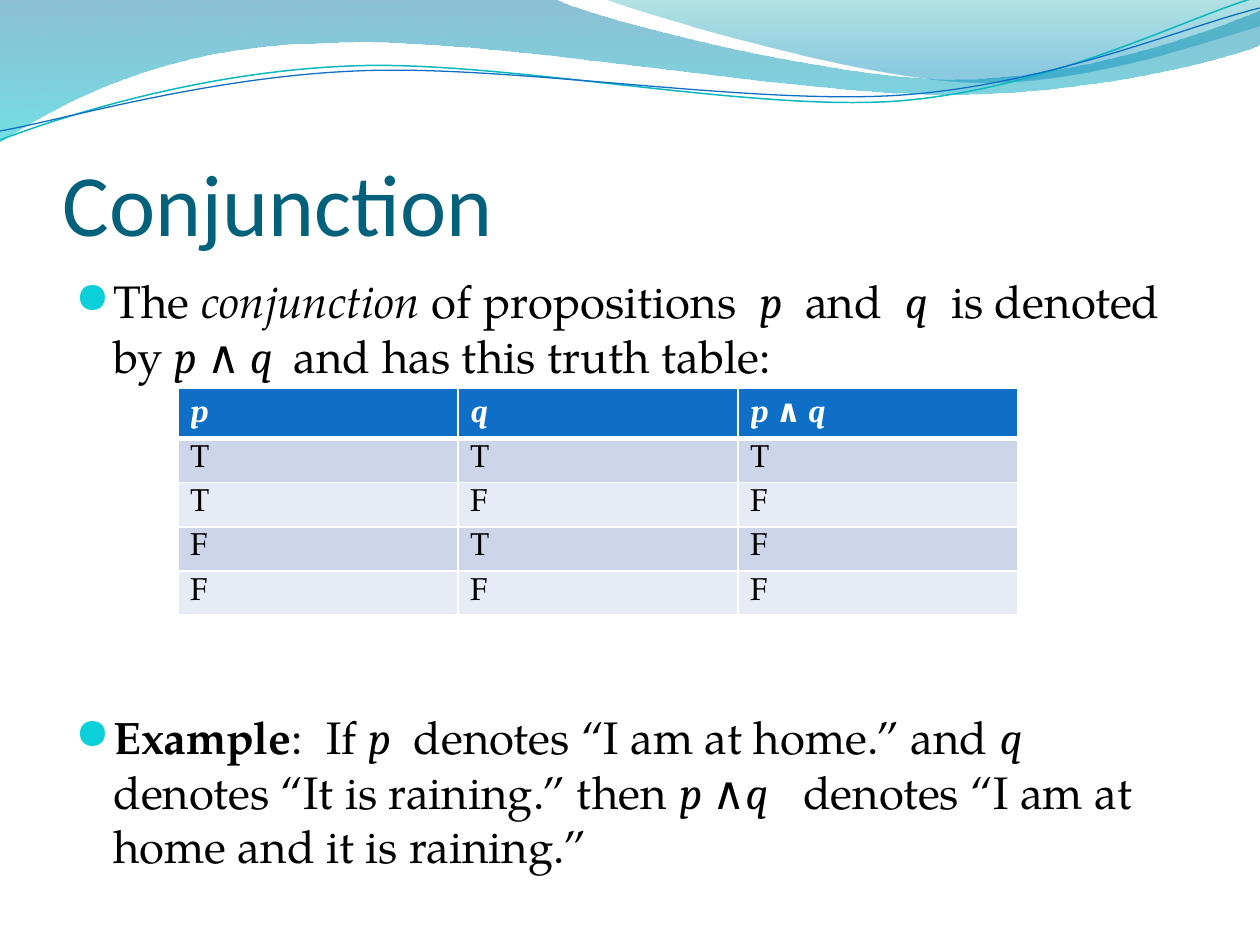
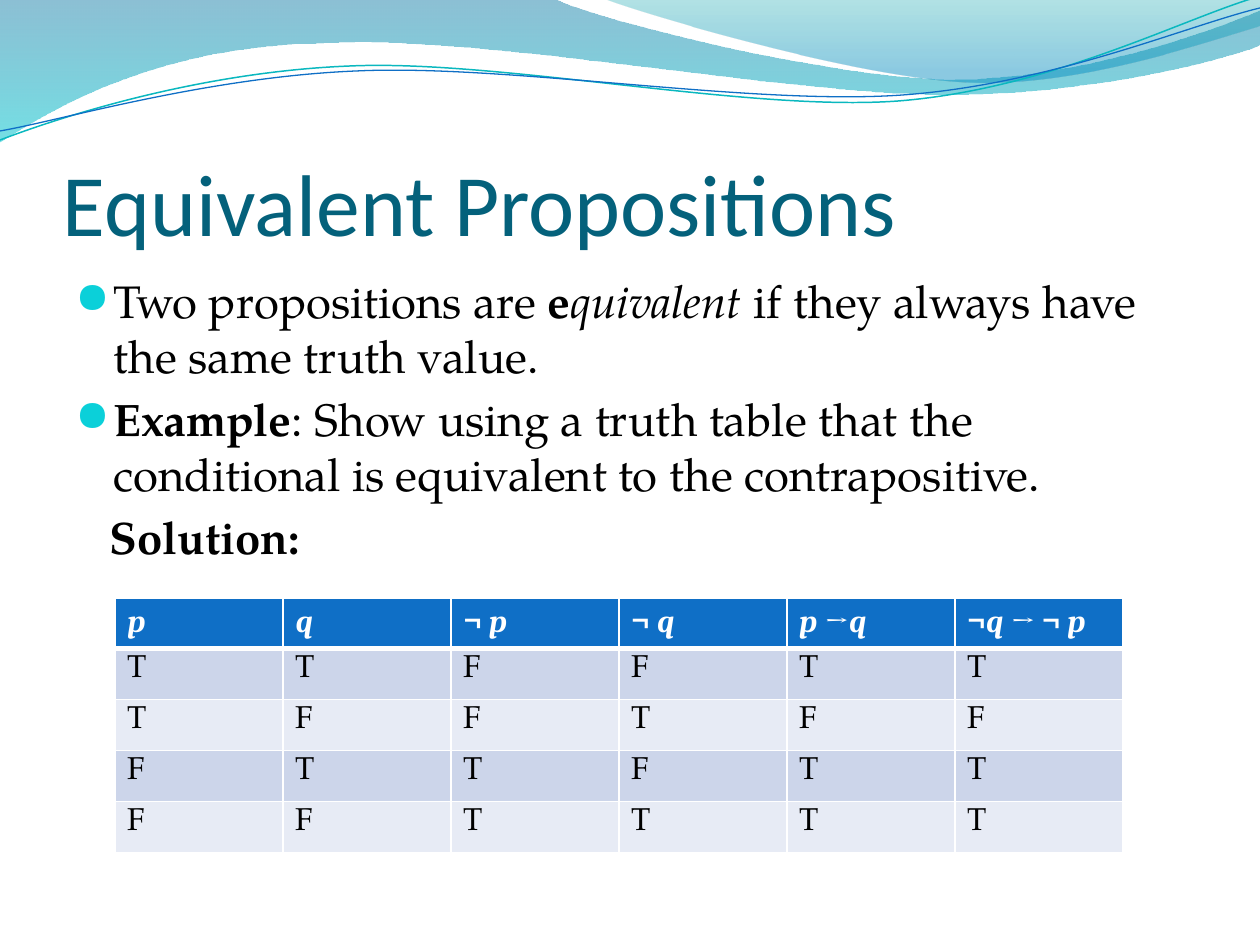
"""Build two slides on truth tables beneath a shared wave header."""
from dataclasses import dataclass
from typing import Any, NamedTuple

from lxml import etree
from pptx import Presentation
from pptx import util as u
from pptx.dml.color import RGBColor
from pptx.enum import text
from pptx.oxml.ns import qn

EMU_PER_PX = 914400 / 126
TITLE_COLOUR, BULLET_COLOUR, INK, WHITE = "04617B", "0BD0D9", "000000", "FFFFFF"
HEADER_FILL, BAND_FILLS = "0F6FC6", ("CCD5EA", "E7EBF5")
SERIF, MATH, BULLET_FONT = "TeX Gyre Pagella", "Cambria", "OpenSymbol"
FORMATS = {
    "plain": {"name": SERIF, "bold": False, "italic": False},
    "bold": {"name": SERIF, "bold": True, "italic": False},
    "italic": {"name": SERIF, "bold": False, "italic": True},
    "variable": {"name": MATH, "bold": False, "italic": True},
    "symbol": {"name": MATH, "bold": False, "italic": False},
    "title": {"name": "Calibri", "bold": False, "italic": False},
}
Point = tuple[int, int]


class Run(NamedTuple):
    """A stretch of text in one named format."""
    words: str
    style: str = "plain"


class Stop(NamedTuple):
    """A gradient stop with its opacity in percent."""
    position: float
    colour: str
    opacity: int


class Box(NamedTuple):
    """A rectangle in px."""
    left: int
    top: int
    width: int
    height: int


@dataclass(frozen=True)
class Wave:
    """An outline whose steps hold one point for a line or three for a curve."""
    start: Point
    steps: tuple[tuple[Point, ...], ...]
    stops: tuple[Stop, ...] = ()
    line: str = ""
    weight: float = 0


@dataclass(frozen=True)
class Item:
    """A body paragraph with its space before and left margin in px."""
    runs: tuple[Run, ...]
    bulleted: bool = True
    space_before: int = 9
    margin: int = 38


@dataclass(frozen=True)
class TruthTable:
    """A truth table with its place and sizes in px."""
    left: int
    top: int
    column_width: int
    header_height: int
    row_height: int
    headings: tuple[tuple[Run, ...], ...]
    rows: tuple[str, ...]


@dataclass(frozen=True)
class Page:
    """The content of one slide."""
    title: str
    items: tuple[Item, ...]
    table: TruthTable


TITLE_BOX = Box(63, 97, 1134, 157)
BODY_BOX = Box(63, 267, 1134, 605)
WAVES = (
    Wave((0, 0), (
        ((554, -1),),
        ((600, 21), (837, 79), (955, 79)),
        ((1075, 79), (1207, 33), (1260, 11)),
        ((1261, 45),),
        ((1239, 55), (1096, 96), (940, 94)),
        ((784, 94), (481, 35), (324, 43)),
        ((163, 45), (58, 105), (-1, 142)),
    ), stops=(Stop(0, "0074A1", 45), Stop(1, "00C6CF", 55))),
    Wave((604, -1), (
        ((641, 14), (859, 78), (969, 82)),
        ((1079, 87), (1211, 40), (1260, 26)),
        ((1260, 0),),
    ), stops=(Stop(0, "00A1A9", 30), Stop(0.8, "008BBF", 45))),
    Wave((0, 140), (
        ((60, 117), (199, 72), (349, 66)),
        ((498, 59), (747, 112), (898, 101)),
        ((1050, 89), (1182, 19), (1257, -3)),
    ), line="0AB8BF", weight=0.85),
    Wave((0, 131), (
        ((59, 121), (207, 77), (357, 71)),
        ((508, 64), (752, 106), (903, 95)),
        ((1053, 84), (1186, 26), (1260, 8)),
    ), line="0F6FC6", weight=0.75),
)

P, Q = Run("p", "variable"), Run("q", "variable")
P_SPACED, NOT = Run("p ", "variable"), Run("¬ ", "symbol")
AND = Run("∧ ", "symbol")
EXAMPLE = Run("Example", "bold")
PAGES = (
    Page(
        "Conjunction",
        (
            Item((Run("The "), Run("conjunction", "italic"), Run(" of propositions  "), P,
                  Run("  and  "), Q, Run("  is denoted by "), P_SPACED, AND,
                  Run("q  ", "variable"), Run("and has this truth table:"))),
            Item((EXAMPLE, Run(":  If "), P, Run("  denotes “I am at home.” and "), Q,
                  Run("  denotes “It is raining.” then "), P_SPACED, Run("∧", "symbol"), Q,
                  Run("   denotes “I am at home and it is raining.”")), space_before=327),
        ),
        TruthTable(178, 388, 280, 49, 44, ((P,), (Q,), (P_SPACED, AND, Q)),
                   ("TTT", "TFF", "FTF", "FFF")),
    ),
    Page(
        "Equivalent Propositions",
        (
            Item((Run("Two propositions are "), Run("e", "bold"), Run("quivalent ", "italic"),
                  Run("if they always have the same truth value."))),
            Item((EXAMPLE, Run(": Show using a truth table that the conditional is "
                               "equivalent to the contrapositive."))),
            Item((Run("Solution:", "bold"),), bulleted=False, margin=34),
        ),
        TruthTable(115, 598, 168, 49, 51,
                   ((P,), (Q,), (NOT, P), (NOT, Q), (P_SPACED, Run("→", "symbol"), Q),
                    (Run("¬", "symbol"), Run("q ", "variable"), Run("→ ¬ ", "symbol"), P)),
                   ("TTFFTT", "TFFTFF", "FTTFTT", "FFTTTT")),
    ),
)


def px(length: int) -> u.Emu:
    """Turn px into EMU."""
    return u.Emu(round(length * EMU_PER_PX))


def rgb(colour: str) -> RGBColor:
    """Turn a hex string into a colour."""
    return RGBColor.from_string(colour)


def set_all(target: Any, values: dict[str, Any]) -> None:
    """Set each named attribute of the target."""
    for name, value in values.items():
        setattr(target, name, value)


def add_node(parent: Any, tag: str, **attributes: str) -> Any:
    """Append a drawing element to the parent."""
    return etree.SubElement(parent, qn(f"a:{tag}"), attributes)


def add_runs(paragraph: Any, runs: tuple[Run, ...], size: int, colour: str, **extra: Any) -> None:
    """Write formatted runs into a paragraph."""
    for words, style in runs:
        run = paragraph.add_run()
        run.text = words
        set_all(run.font, {**FORMATS[style], "size": u.Pt(size), **extra})
        run.font.color.rgb = rgb(colour)


def bend_segments(shape: Any, steps: tuple[tuple[Point, ...], ...]) -> None:
    """Merge the segments of each three-point step into one cubic curve."""
    segments = iter(list(shape.element.spPr.iter(qn("a:lnTo"))))
    for step in steps:
        first, *others = [next(segments) for _ in step]
        if others:
            first.tag = qn("a:cubicBezTo")
        for segment in others:
            first.append(segment[0])
            segment.getparent().remove(segment)


def draw_wave(slide: Any, wave: Wave) -> None:
    """Draw one header wave, filled or stroked."""
    vertices = [(px(x), px(y)) for step in wave.steps for x, y in step]
    builder = slide.shapes.build_freeform(*map(px, wave.start), scale=1.0)
    builder.add_line_segments(vertices, close=bool(wave.stops))
    shape = builder.convert_to_shape()
    bend_segments(shape, wave.steps)
    shape.shadow.inherit = False
    if not wave.stops:
        shape.fill.background()
        shape.line.color.rgb = rgb(wave.line)
        shape.line.width = u.Pt(wave.weight)
        return
    shape.line.fill.background()
    shape.fill.gradient()
    shape.fill.gradient_angle = 270
    for gradient_stop, stop in zip(shape.fill.gradient_stops, wave.stops):
        gradient_stop.position = stop.position
        gradient_stop.color.rgb = rgb(stop.colour)
    for node, stop in zip(shape.element.spPr.iter(qn("a:srgbClr")), wave.stops):
        add_node(node, "alpha", val=str(stop.opacity * 1000))


def add_text_frame(slide: Any, box: Box, **values: Any) -> Any:
    """Add a wrapping text box and return its frame."""
    frame = slide.shapes.add_textbox(*map(px, box)).text_frame
    set_all(frame, {"word_wrap": True, **values})
    return frame


def draw_title(slide: Any, title: str) -> None:
    """Draw the slide title."""
    frame = add_text_frame(slide, TITLE_BOX, vertical_anchor=text.MSO_ANCHOR.BOTTOM,
                           margin_left=0, margin_right=0, margin_bottom=0)
    add_runs(frame.paragraphs[0], (Run(title, "title"),), 50, TITLE_COLOUR)


def draw_body(slide: Any, items: tuple[Item, ...]) -> None:
    """Draw the body paragraphs."""
    frame = add_text_frame(slide, BODY_BOX)
    for index, item in enumerate(items):
        paragraph = frame.add_paragraph() if index else frame.paragraphs[0]
        paragraph.space_before = px(item.space_before)
        properties = paragraph._p.get_or_add_pPr()
        properties.set("marL", str(px(item.margin)))
        if item.bulleted:
            properties.set("indent", str(-px(item.margin)))
            add_node(add_node(properties, "buClr"), "srgbClr", val=BULLET_COLOUR)
            add_node(properties, "buSzPct", val="95000")
            add_node(properties, "buFont", typeface=BULLET_FONT)
            add_node(properties, "buChar", char="●")
        add_runs(paragraph, item.runs, 26, INK)


def style_cell(cell: Any, fill: str, top: float, bottom: float) -> None:
    """Give a cell its white borders and its fill."""
    properties = cell._tc.get_or_add_tcPr()
    for side, weight in (("lnL", 1), ("lnR", 1), ("lnT", top), ("lnB", bottom)):
        border = add_node(properties, side, w=str(u.Pt(weight)))
        add_node(add_node(border, "solidFill"), "srgbClr", val=WHITE)
    cell.fill.solid()
    cell.fill.fore_color.rgb = rgb(fill)


def draw_table(slide: Any, truth: TruthTable) -> None:
    """Draw a truth table with a header row and banded rows."""
    columns, rows = len(truth.headings), len(truth.rows)
    box = Box(truth.left, truth.top, truth.column_width * columns,
              truth.header_height + truth.row_height * rows)
    table = slide.shapes.add_table(rows + 1, columns, *map(px, box)).table
    for column in table.columns:
        column.width = px(truth.column_width)
    for index, row in enumerate(table.rows):
        row.height = px(truth.row_height if index else truth.header_height)
    for column, heading in enumerate(truth.headings):
        cell = table.cell(0, column)
        style_cell(cell, HEADER_FILL, 1, 3)
        add_runs(cell.text_frame.paragraphs[0], heading, 18, WHITE, bold=True)
    for index, values in enumerate(truth.rows):
        for column, value in enumerate(values):
            cell = table.cell(index + 1, column)
            cell.margin_bottom = 0
            style_cell(cell, BAND_FILLS[index % 2], 1 if index else 3, 1)
            add_runs(cell.text_frame.paragraphs[0], (Run(value),), 18, INK)


def main() -> None:
    """Build and save the presentation."""
    presentation = Presentation()
    set_all(presentation, {"slide_width": px(1260), "slide_height": px(945)})
    for page in PAGES:
        slide = presentation.slides.add_slide(presentation.slide_layouts[6])
        for wave in WAVES:
            draw_wave(slide, wave)
        draw_title(slide, page.title)
        draw_body(slide, page.items)
        draw_table(slide, page.table)
    presentation.save("out.pptx")


if __name__ == "__main__":
    main()
